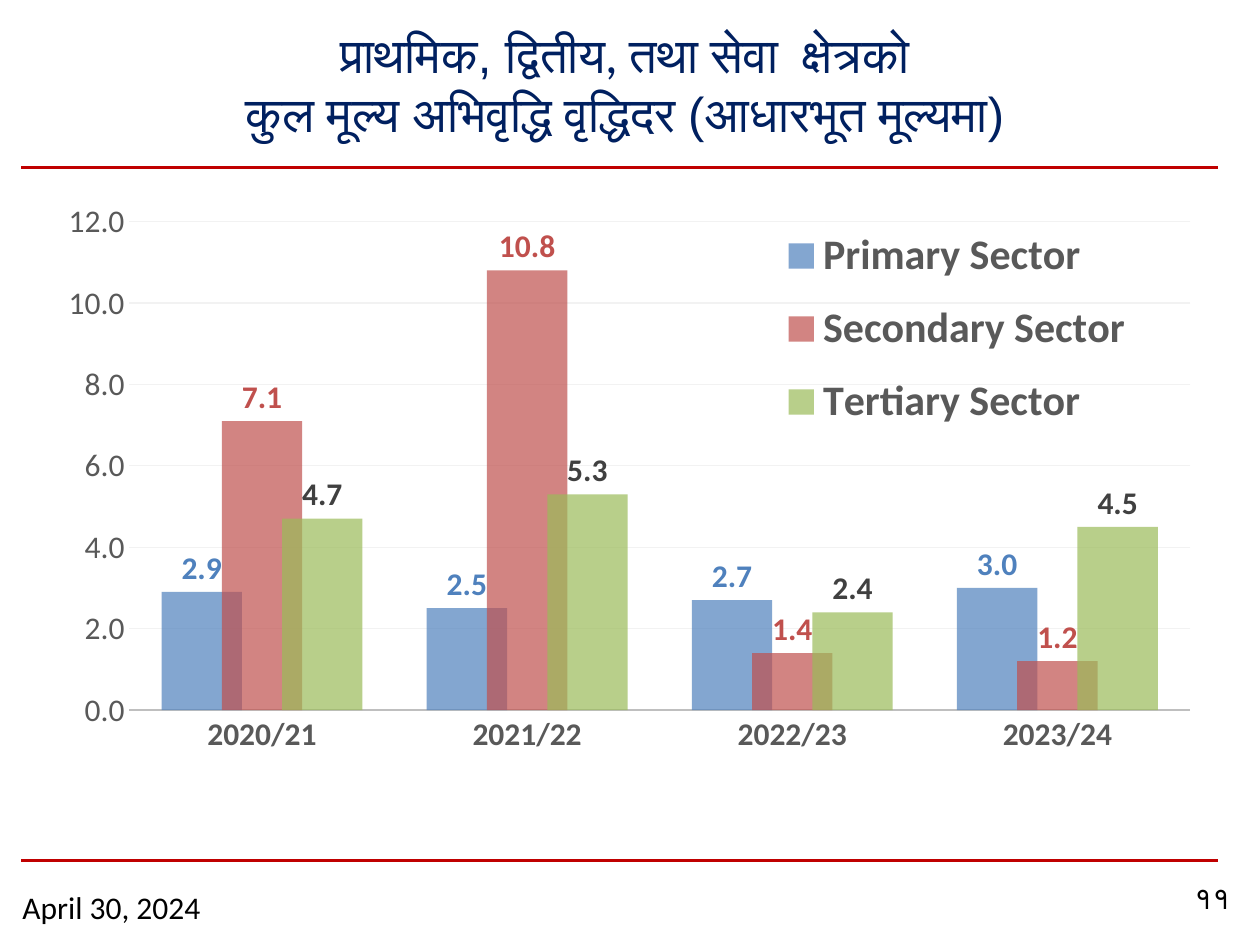
from dataclasses import dataclass

from lxml.etree import SubElement
from pptx import Presentation
from pptx.chart.data import CategoryChartData
from pptx.dml.color import RGBColor
from pptx.enum.chart import XL_CHART_TYPE, XL_LABEL_POSITION, XL_LEGEND_POSITION, XL_TICK_MARK
from pptx.enum.shapes import MSO_CONNECTOR
from pptx.enum.text import MSO_ANCHOR, PP_ALIGN
from pptx.oxml import parse_xml
from pptx.oxml.ns import nsdecls, qn
from pptx.util import Inches, Pt


@dataclass(frozen=True)
class Theme:
    title: str = "002060"
    text: str = "000000"
    axis_text: str = "595959"
    rule: str = "C00000"
    axis_line: str = "BFBFBF"
    grid: str = "F2F2F2"
    title_size: int = 28
    legend_size: int = 24
    body_size: int = 18
    body_font: str = "Calibri"
    bar_alpha: int = 70


def set_values(target, values):
    for name, value in values.items():
        setattr(target, name, value)


def set_font(font, color, **values):
    set_values(font, values)
    font.color.rgb = RGBColor.from_string(color)


def set_line(line, color, width):
    line.color.rgb = RGBColor.from_string(color)
    line.width = Pt(width)


def set_layout(element, successor_tags, inner=False, **fractions):
    """Place a chart part by fractions of the chart area."""
    for old in element.findall(qn("c:layout")):
        element.remove(old)
    layout = parse_xml(f"<c:layout {nsdecls('c')}/>")
    manual = SubElement(layout, qn("c:manualLayout"))
    settings = {"layoutTarget": "inner"} if inner else {}
    settings |= {"xMode": "edge", "yMode": "edge"} | fractions
    for tag, value in settings.items():
        SubElement(manual, qn(f"c:{tag}")).set("val", str(value))
    element.insert_element_before(layout, *successor_tags)


class SlideBuilder:
    def __init__(self, slide, theme):
        self.slide = slide
        self.theme = theme

    def text(self, box, lines, size, color, align=PP_ALIGN.LEFT, anchor=MSO_ANCHOR.TOP):
        """Each line is a list of (text, font name) runs."""
        shape = self.slide.shapes.add_textbox(*map(Inches, box))
        set_values(shape.text_frame, {"word_wrap": True, "vertical_anchor": anchor})
        paragraph = shape.text_frame.paragraphs[0]
        paragraph.alignment = align
        for index, runs in enumerate(lines):
            if index:
                paragraph.add_line_break()
            for text, font_name in runs:
                run = paragraph.add_run()
                run.text = text
                set_font(run.font, color, name=font_name, size=Pt(size))

    def rule(self, left, right, top):
        connector = self.slide.shapes.add_connector(
            MSO_CONNECTOR.STRAIGHT, *map(Inches, (left, top, right, top)))
        set_line(connector.line, self.theme.rule, 1.5)
        SubElement(connector._element.spPr, qn("a:effectLst"))

    def column_chart(self, box, categories, series_rows):
        theme = self.theme
        data = CategoryChartData(number_format="0.0")
        data.categories = categories
        for name, values, *_ in series_rows:
            data.add_series(name, values)
        chart = self.slide.shapes.add_chart(
            XL_CHART_TYPE.COLUMN_CLUSTERED, *map(Inches, box), data).chart
        body = {"name": theme.body_font, "size": Pt(theme.body_size)}
        set_values(chart, {"has_title": False, "has_legend": True})
        set_font(chart.font, theme.text, **body)

        # Bars and their labels
        plot = chart.plots[0]
        set_values(plot, {"gap_width": 80, "overlap": 25, "vary_by_categories": False})
        for series, (_, _, fill_color, label_color) in zip(plot.series, series_rows):
            series.invert_if_negative = False
            series.format.fill.solid()
            series.format.fill.fore_color.rgb = RGBColor.from_string(fill_color)
            color_element = next(series._element.iter(qn("a:srgbClr")))
            SubElement(color_element, qn("a:alpha")).set("val", str(theme.bar_alpha * 1000))
            labels = series.data_labels
            set_values(labels, {
                "show_value": True, "number_format": "0.0",
                "number_format_is_linked": False,
                "position": XL_LABEL_POSITION.OUTSIDE_END})
            set_font(labels.font, label_color, bold=True, **body)

        # Axes
        for axis, bold in ((chart.category_axis, True), (chart.value_axis, False)):
            set_values(axis, {"major_tick_mark": XL_TICK_MARK.NONE,
                              "minor_tick_mark": XL_TICK_MARK.NONE})
            set_font(axis.tick_labels.font, theme.axis_text, bold=bold, **body)
        set_line(chart.category_axis.format.line, theme.axis_line, 1.25)
        value_axis = chart.value_axis
        set_values(value_axis, {"minimum_scale": 0, "maximum_scale": 12, "major_unit": 2})
        set_values(value_axis.tick_labels,
                   {"number_format": "0.0", "number_format_is_linked": False})
        value_axis.format.line.fill.background()
        set_line(value_axis.major_gridlines.format.line, theme.grid, 0.75)

        # Legend over the upper right of the plot
        legend = chart.legend
        set_values(legend, {"position": XL_LEGEND_POSITION.BOTTOM, "include_in_layout": False})
        set_font(legend.font, theme.axis_text, name=theme.body_font,
                 size=Pt(theme.legend_size), bold=True)
        set_layout(legend._element, ("c:overlay", "c:spPr", "c:txPr"),
                   x=0.62, y=0.03, w=0.32, h=0.37)
        plot_area = chart._chartSpace.chart.plotArea
        set_layout(plot_area, ("c:barChart",), inner=True, x=0.07, y=0.05, w=0.91, h=0.75)


def main():
    presentation = Presentation()
    set_values(presentation, {"slide_width": Inches(10), "slide_height": Inches(7.5)})
    theme = Theme()
    builder = SlideBuilder(presentation.slides.add_slide(presentation.slide_layouts[6]), theme)

    # Rules under the title and above the footer
    for top in (1.33, 6.83):
        builder.rule(0.17, 9.67, top)

    # Title
    builder.text((0, 0.08, 9.92, 1.16), [
        [("प्राथमिक", "Lato"), (", द्वितीय", "Arial"), (", तथा ", "Lato"),
         ("सेवा  क्षेत्रको", "Arial")],
        [("कुल मूल्य अभिवृद्धि वृद्धिदर (आधारभूत मूल्यमा)", "Arial")],
    ], theme.title_size, theme.title, PP_ALIGN.CENTER, MSO_ANCHOR.MIDDLE)

    # Growth by sector: name, values, fill colour, label colour
    builder.column_chart(
        (0.38, 1.5, 9.25, 5.17),
        ["2020/21", "2021/22", "2022/23", "2023/24"],
        [("Primary Sector", (2.9, 2.5, 2.7, 3.0), "4F81BD", "4F81BD"),
         ("Secondary Sector", (7.1, 10.8, 1.4, 1.2), "C0504D", "C0504D"),
         ("Tertiary Sector", (4.7, 5.3, 2.4, 4.5), "9BBB59", "404040")])

    # Footer
    builder.text((0.08, 7, 2.17, 0.41), [[("April 30, 2024", theme.body_font)]],
                 theme.body_size, theme.text)
    builder.text((9.33, 6.92, 0.58, 0.48), [[("११", "Roboto")]],
                 theme.body_size, theme.text, PP_ALIGN.CENTER)

    presentation.save("out.pptx")


if __name__ == "__main__":
    main()
